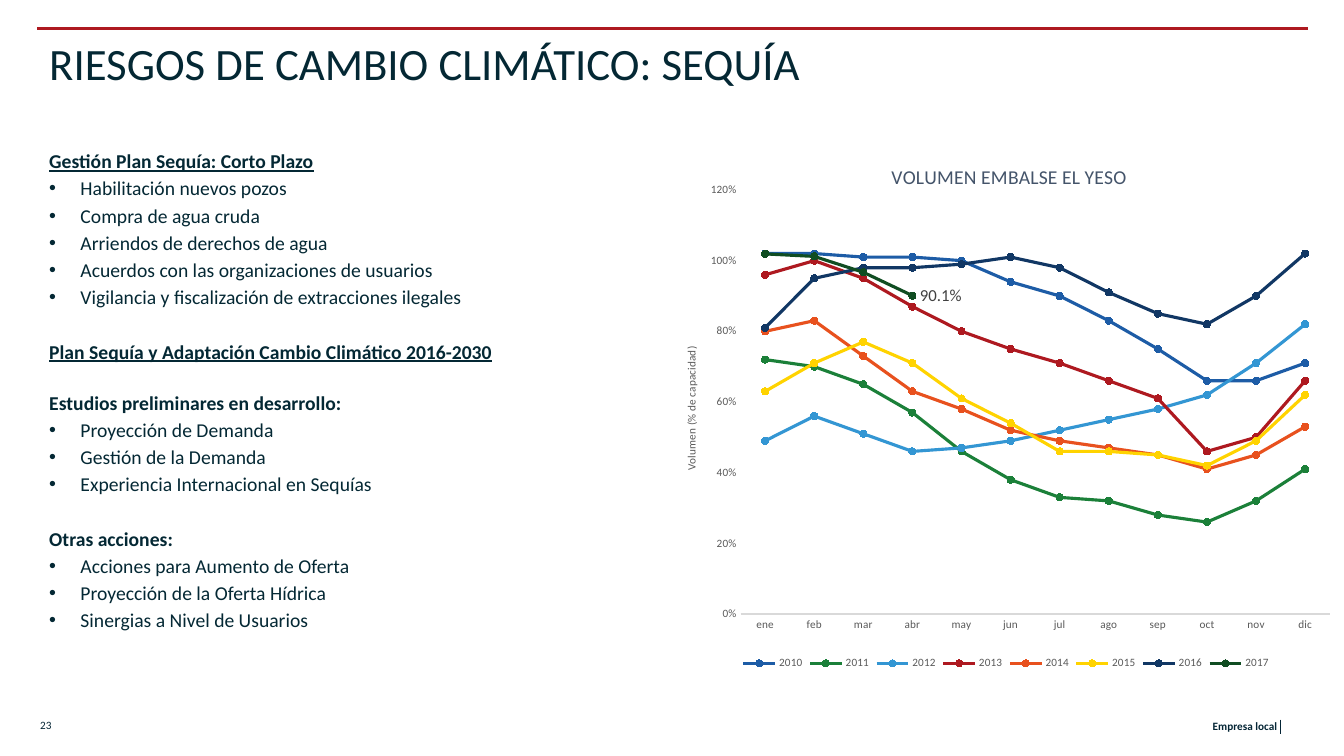
from dataclasses import dataclass

from lxml.etree import SubElement
from pptx import Presentation
from pptx.chart.data import CategoryChartData
from pptx.dml.color import RGBColor
from pptx.enum.chart import (
    XL_CHART_TYPE as ChartType,
    XL_LABEL_POSITION as LabelPosition,
    XL_LEGEND_POSITION as LegendPosition,
    XL_MARKER_STYLE as MarkerStyle,
    XL_TICK_MARK as TickMark,
)
from pptx.enum.shapes import MSO_CONNECTOR as Connector
from pptx.enum.text import MSO_ANCHOR as Anchor, PP_ALIGN as Align
from pptx.oxml.ns import qn
from pptx.util import Inches, Pt


@dataclass(frozen=True)
class Theme:
    font: str = "Calibri"
    ink: str = "042834"
    footer: str = "042535"
    footer_mark: str = "032435"
    rule: str = "AE1920"
    axis_text: str = "595959"
    axis_line: str = "D9D9D9"
    chart_title: str = "44546A"
    label: str = "404040"
    title_size: int = 32
    body_size: int = 14
    label_size: int = 12
    small_size: int = 8


MONTHS = "ene feb mar abr may jun jul ago sep oct nov dic".split()
VOLUMES = {
    "2010": ("1D5CA6", [1.02, 1.02, 1.01, 1.01, 1, 0.94, 0.9, 0.83, 0.75, 0.66, 0.66, 0.71]),
    "2011": ("1B8039", [0.72, 0.7, 0.65, 0.57, 0.46, 0.38, 0.33, 0.32, 0.28, 0.26, 0.32, 0.41]),
    "2012": ("3396D3", [0.49, 0.56, 0.51, 0.46, 0.47, 0.49, 0.52, 0.55, 0.58, 0.62, 0.71, 0.82]),
    "2013": ("AE1920", [0.96, 1, 0.95, 0.87, 0.8, 0.75, 0.71, 0.66, 0.61, 0.46, 0.5, 0.66]),
    "2014": ("E8511E", [0.8, 0.83, 0.73, 0.63, 0.58, 0.52, 0.49, 0.47, 0.45, 0.41, 0.45, 0.53]),
    "2015": ("FFD300", [0.63, 0.71, 0.77, 0.71, 0.61, 0.54, 0.46, 0.46, 0.45, 0.42, 0.49, 0.62]),
    "2016": ("113764", [0.81, 0.95, 0.98, 0.98, 0.99, 1.01, 0.98, 0.91, 0.85, 0.82, 0.9, 1.02]),
    "2017": ("104D22", [1.019, 1.012, 0.967, 0.901] + [None] * 8),
}
SECTIONS = [
    ("Gestión Plan Sequía: Corto Plazo", True, 0, [
        "Habilitación nuevos pozos",
        "Compra de agua cruda",
        "Arriendos de derechos de agua",
        "Acuerdos con las organizaciones de usuarios",
        "Vigilancia y fiscalización de extracciones ilegales",
    ]),
    ("Plan Sequía y Adaptación Cambio Climático 2016-2030", True, 22.2, []),
    ("Estudios preliminares en desarrollo:", False, 19.6, [
        "Proyección de Demanda",
        "Gestión de la Demanda",
        "Experiencia Internacional en Sequías",
    ]),
    ("Otras acciones:", False, 22.2, [
        "Acciones para Aumento de Oferta",
        "Proyección de la Oferta Hídrica",
        "Sinergias a Nivel de Usuarios",
    ]),
]


class SlideBuilder:
    """Draws styled elements on one slide, placed on a grid of 96 columns by 54 rows."""

    def __init__(self, presentation, theme):
        self.theme = theme
        self.column = presentation.slide_width / 96
        self.row = presentation.slide_height / 54
        self.slide = presentation.slides.add_slide(presentation.slide_layouts[6])

    def place(self, left, top, width, height):
        return [int(n * unit) for n, unit in zip((left, top, width, height), (self.column, self.row) * 2)]

    def style(self, font, size, color, bold=False, underline=False):
        font.name, font.size, font.bold = self.theme.font, Pt(size), bold
        font.color.rgb = RGBColor.from_string(color)
        if underline:
            font.underline = True

    def run(self, paragraph, text, *style):
        run = paragraph.add_run()
        run.text = text
        self.style(run.font, *style)

    def frame(self, area, anchor=Anchor.TOP):
        frame = self.slide.shapes.add_textbox(*self.place(*area)).text_frame
        frame.word_wrap, frame.vertical_anchor = True, anchor
        return frame

    def text(self, area, text, size, color, bold=False, anchor=Anchor.TOP, align=Align.LEFT):
        paragraph = self.frame(area, anchor).paragraphs[0]
        paragraph.alignment = align
        self.run(paragraph, text, size, color, bold)

    def line(self, left, top, right, bottom, color, width):
        ends = self.place(left, top, right, bottom)
        connector = self.slide.shapes.add_connector(Connector.STRAIGHT, *ends)
        connector.line.color.rgb = RGBColor.from_string(color)
        connector.line.width = Pt(width)
        SubElement(connector.element.spPr, qn("a:effectLst"))

    def sections(self, area, sections):
        theme, frame = self.theme, self.frame(area)
        for index, (heading, underline, gap, items) in enumerate(sections):
            paragraph = frame.add_paragraph() if index else frame.paragraphs[0]
            paragraph.space_before = Pt(gap)
            self.run(paragraph, heading, theme.body_size, theme.ink, True, underline)
            for item in items:
                paragraph = frame.add_paragraph()
                properties = paragraph._p.get_or_add_pPr()
                properties.set("marL", str(Inches(0.31)))
                properties.set("indent", str(Inches(-0.31)))
                SubElement(properties, qn("a:buFont"), typeface="Arial")
                SubElement(properties, qn("a:buChar"), char="•")
                paragraph.space_before = Pt(2.6)
                self.run(paragraph, item, theme.body_size, theme.ink)

    def arrange(self, element, **shares):
        layout = element.find(qn("c:layout"))
        if layout is None:
            layout = SubElement(element, qn("c:layout"))
            element.insert(0, layout)
        manual = SubElement(layout, qn("c:manualLayout"))
        if "w" in shares:
            SubElement(manual, qn("c:layoutTarget"), val="inner")
        for side in "xy":
            SubElement(manual, qn(f"c:{side}Mode"), val="edge")
        for name, share in shares.items():
            SubElement(manual, qn(f"c:{name}"), val=str(share))

    def chart_text(self, title, text, size, color, x, y):
        self.run(title.text_frame.paragraphs[0], text, size, color)
        self.arrange(title.element, x=x, y=y)

    def line_chart(self, area, title, axis_title, categories, volumes, labelled):
        theme = self.theme
        small = theme.small_size, theme.axis_text
        data = CategoryChartData(number_format="0.0%")
        data.categories = categories
        for year, (_, values) in volumes.items():
            data.add_series(year, values)
        chart = self.slide.shapes.add_chart(ChartType.LINE_MARKERS, *self.place(*area), data).chart
        self.style(chart.font, *small)
        chart.has_title = chart.has_legend = True
        self.chart_text(chart.chart_title, title, theme.body_size, theme.chart_title, 0.325, 0.04)
        chart.legend.position, chart.legend.include_in_layout = LegendPosition.BOTTOM, False
        self.style(chart.legend.font, *small)
        self.arrange(chart.element.find(".//" + qn("c:plotArea")), x=0.107, y=0.097, w=0.872, h=0.791)

        months, scale = chart.category_axis, chart.value_axis
        for axis in (months, scale):
            axis.major_tick_mark = axis.minor_tick_mark = TickMark.NONE
            axis.has_major_gridlines = False
            self.style(axis.tick_labels.font, *small)
        months.format.line.color.rgb = RGBColor.from_string(theme.axis_line)
        months.format.line.width = Pt(0.75)
        scale.format.line.fill.background()
        scale.minimum_scale, scale.maximum_scale, scale.major_unit = 0, 1.2, 0.2
        scale.tick_labels.number_format, scale.tick_labels.number_format_is_linked = "0%", False
        self.chart_text(scale.axis_title, axis_title, *small, 0.02, 0.385)

        chart.plots[0].vary_by_categories = False
        for series, (color, _) in zip(chart.plots[0].series, volumes.values()):
            series.smooth = False
            series.format.line.width = Pt(2.25)
            series.marker.style, series.marker.size = MarkerStyle.CIRCLE, 5
            marker = series.marker.format
            marker.fill.solid()
            for paint in (series.format.line, marker.line, marker.fill):
                target = paint.fore_color if paint is marker.fill else paint.color
                target.rgb = RGBColor.from_string(color)
        label = series.points[labelled].data_label
        self.style(label.font, theme.label_size, theme.label)
        label.position = LabelPosition.RIGHT
        series.data_labels.show_value = False


def main():
    presentation = Presentation()
    presentation.slide_width, presentation.slide_height = Inches(13.33), Inches(7.5)
    theme = Theme()
    builder = SlideBuilder(presentation, theme)
    footer = theme.small_size, theme.footer
    builder.text((75.74, 50.76, 16.2, 2.16), "Empresa local", *footer, True, Anchor.MIDDLE, Align.RIGHT)
    builder.text((2.16, 50.7, 16.2, 2.16), "23", *footer, anchor=Anchor.MIDDLE)
    builder.line(91.46, 51.4, 91.46, 52.4, theme.footer_mark, 0.5)
    builder.line(2.66, 2.02, 93.4, 2.02, theme.rule, 2)
    builder.text((2.81, 2.23, 90.5, 5.18), "RIESGOS DE CAMBIO CLIMÁTICO: SEQUÍA", theme.title_size, theme.ink)
    builder.sections((2.81, 10.3, 45.4, 38), SECTIONS)
    builder.line_chart((47.74, 9.86, 48.26, 38.3), "VOLUMEN EMBALSE EL YESO",
                       "Volumen (% de capacidad)", MONTHS, VOLUMES, MONTHS.index("abr"))
    presentation.save("out.pptx")


if __name__ == "__main__":
    main()
